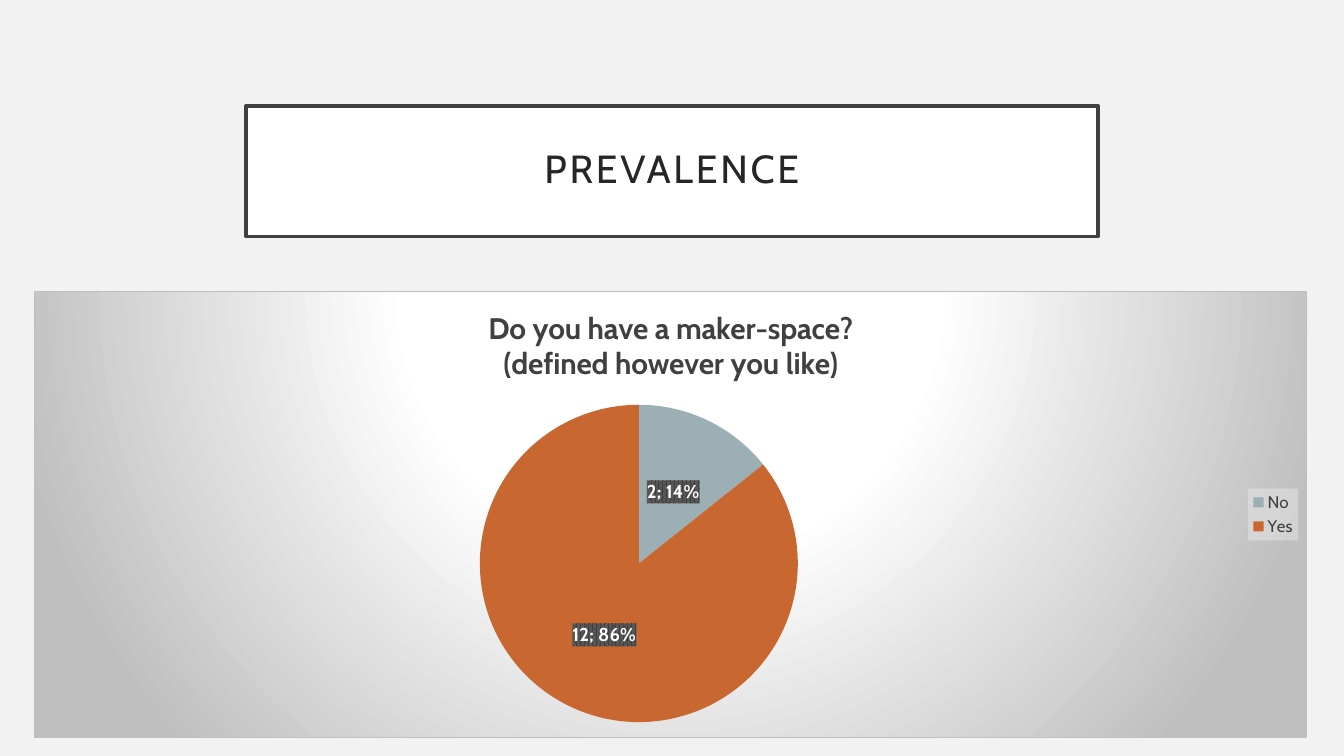
from lxml.etree import fromstring
from pptx import Presentation
from pptx.chart.data import CategoryChartData
from pptx.dml.color import RGBColor
from pptx.enum.chart import XL_CHART_TYPE, XL_LABEL_POSITION, XL_LEGEND_POSITION
from pptx.enum.shapes import MSO_SHAPE
from pptx.enum.text import MSO_ANCHOR, PP_ALIGN
from pptx.oxml import parse_xml
from pptx.oxml.ns import nsdecls
from pptx.util import Inches, Pt

PAPER = RGBColor(0xF2, 0xF2, 0xF2)
WHITE = RGBColor(0xFF, 0xFF, 0xFF)
BLACK = RGBColor(0x00, 0x00, 0x00)
INK = RGBColor(0x26, 0x26, 0x26)
CHARCOAL = RGBColor(0x40, 0x40, 0x40)
SILVER = RGBColor(0xBF, 0xBF, 0xBF)
AMBER = RGBColor(0xF6, 0xA2, 0x1D)
BLUE_GREY = RGBColor(0x9B, 0xAF, 0xB5)
RUST = RGBColor(0xC9, 0x67, 0x31)

QUESTION = ["Do you have a maker-space?", "(defined however you like)"]
ANSWERS = [(" ".join(QUESTION), None, AMBER), ("No", 2, BLUE_GREY), ("Yes", 12, RUST)]

RADIAL_FILL = f"""<a:gradFill rotWithShape="1"><a:gsLst>
<a:gs pos="0"><a:srgbClr val="{WHITE}"/></a:gs>
<a:gs pos="39000"><a:srgbClr val="{WHITE}"/></a:gs>
<a:gs pos="100000"><a:srgbClr val="{SILVER}"/></a:gs></a:gsLst>
<a:path path="circle"><a:fillToRect l="50000" t="-80000" r="50000" b="180000"/></a:path>
</a:gradFill><a:ln w="9525"><a:solidFill><a:srgbClr val="{SILVER}"/></a:solidFill></a:ln>"""
LEGEND_FILL = f"""<a:solidFill><a:srgbClr val="{PAPER}"><a:alpha val="39000"/></a:srgbClr>
</a:solidFill>"""
LABEL_FILL = f"""<a:pattFill prst="pct75"><a:fgClr><a:srgbClr val="{CHARCOAL}"/></a:fgClr>
<a:bgClr><a:srgbClr val="595959"/></a:bgClr></a:pattFill>"""


class SurveySlide:
    font_name = "Cabin"

    def __init__(self, deck):
        self.width, self.height = deck.slide_width, deck.slide_height
        self.slide = deck.slides.add_slide(deck.slide_layouts[6])
        background = self.slide.background.fill
        background.solid()
        background.fore_color.rgb = PAPER

    def area(self, left, top, width, height):
        return (round(left * self.width), round(top * self.height),
                round(width * self.width), round(height * self.height))

    def style(self, font, size, color, bold=False):
        font.name, font.size, font.bold = self.font_name, Pt(size), bold
        font.color.rgb = color

    def heading(self, text, *shares):
        frame = self.slide.shapes.add_shape(MSO_SHAPE.RECTANGLE, *self.area(*shares))
        frame.shadow.inherit = False
        frame.fill.solid()
        frame.fill.fore_color.rgb = WHITE
        frame.line.color.rgb = CHARCOAL
        frame.line.width = Pt(2.5)
        body = frame.text_frame
        body.word_wrap = True
        body.vertical_anchor = MSO_ANCHOR.MIDDLE
        body.margin_left = body.margin_right = Inches(0.2)
        body.margin_top = body.margin_bottom = Inches(0.2)
        line = body.paragraphs[0]
        line.text = text
        line.alignment = PP_ALIGN.CENTER
        line.line_spacing = 0.9
        self.style(line.font, 28, INK)
        line.runs[0].font._element.set("spc", "200")

    def paint(self, text_properties, fill):
        text_properties.addprevious(
            parse_xml(f'<c:spPr {nsdecls("c", "a")}>{fill}</c:spPr>'))

    def pie(self, answers, question, *shares):
        data = CategoryChartData()
        data.categories = [name for name, _, _ in answers]
        data.add_series("Series 1", [count for _, count, _ in answers])
        chart = self.slide.shapes.add_chart(
            XL_CHART_TYPE.PIE, *self.area(*shares), data).chart
        self.style(chart.font, 10, BLACK)
        root = chart.element
        self.paint(root.xpath("./c:txPr")[0], RADIAL_FILL)
        plot = chart.plots[0]
        plot.vary_by_categories = True
        for index, (_, _, color) in enumerate(answers):
            slice_fill = plot.series[0].points[index].format.fill
            slice_fill.solid()
            slice_fill.fore_color.rgb = color
        self.place_plot(root, x=0.35, y=0.25, w=0.25, h=0.72)
        self.chart_title(chart, question)
        self.labels(root, plot.series[0].data_labels)
        self.legend(chart)

    def place_plot(self, root, **shares):
        for old in root.xpath(".//c:plotArea/c:layout"):
            old.getparent().remove(old)
        sizes = "".join(f'<c:{key} val="{share}"/>' for key, share in shares.items())
        root.xpath(".//c:plotArea")[0].insert(0, parse_xml(
            f'<c:layout {nsdecls("c")}><c:manualLayout><c:layoutTarget val="inner"/>'
            f'<c:xMode val="edge"/><c:yMode val="edge"/>{sizes}'
            '</c:manualLayout></c:layout>'))

    def chart_title(self, chart, lines):
        chart.has_title = True
        chart.chart_title.include_in_layout = False
        body = chart.chart_title.text_frame
        body.text = "\n".join(lines)
        for line in body.paragraphs:
            self.style(line.font, 21.3, CHARCOAL, bold=True)

    def labels(self, root, labels):
        labels.show_value = labels.show_percentage = True
        labels.position = XL_LABEL_POSITION.CENTER
        self.style(labels.font, 13.3, WHITE, bold=True)
        self.paint(root.xpath(".//c:ser/c:dLbls/c:txPr")[0], LABEL_FILL)
        root.xpath(".//c:ser/c:dLbls/c:showBubbleSize")[0].addnext(
            fromstring(f'<c:separator {nsdecls("c")}>; </c:separator>'))

    def legend(self, chart):
        chart.has_legend = True
        chart.legend.position = XL_LEGEND_POSITION.RIGHT
        chart.legend.include_in_layout = False
        self.style(chart.legend.font, 12, CHARCOAL)
        self.paint(chart.element.xpath(".//c:legend/c:txPr")[0], LEGEND_FILL)
        chart.element.xpath(".//c:legend/c:legendPos")[0].addnext(parse_xml(
            f'<c:legendEntry {nsdecls("c")}><c:idx val="0"/><c:delete val="1"/>'
            '</c:legendEntry>'))


def main():
    deck = Presentation()
    deck.slide_width, deck.slide_height = Inches(13.33), Inches(7.5)
    prevalence = SurveySlide(deck)
    prevalence.heading("PREVALENCE", 0.183, 0.14, 0.634, 0.173)
    prevalence.pie(ANSWERS, QUESTION, 0.0255, 0.385, 0.947, 0.591)
    deck.save("out.pptx")


if __name__ == "__main__":
    main()
